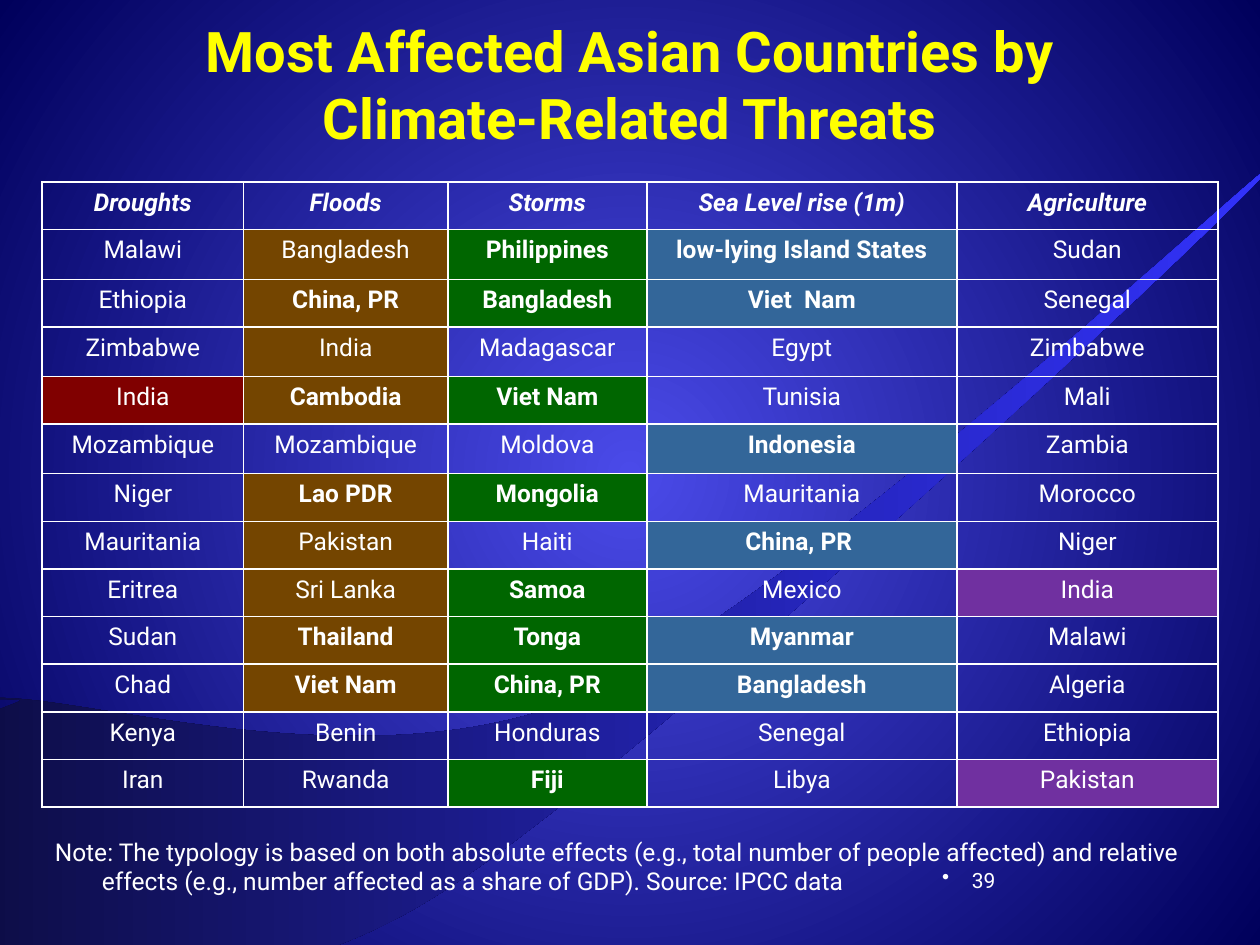
from lxml.etree import SubElement
from pptx import Presentation
from pptx.dml.color import RGBColor
from pptx.enum.text import MSO_ANCHOR, PP_ALIGN
from pptx.oxml import parse_xml
from pptx.oxml.ns import nsdecls, qn
from pptx.util import Cm, Pt

FONT = "Roboto"
HUES = {
    "white": "FFFFFF", "title": "FFFF00", "glow": "4A4AE9", "edge": "00005B",
    "ray": "3333FF", "red": "800000", "brown": "744500",
    "green": "006600", "steel": "336699", "plum": "7030A0",
}
FILLS = ["red", "brown", "green", "steel", "plum"]
WIDTHS = [4.06, 4.12, 4.01, 6.25, 5.26]
SHORT, TALL = 0.96, 1
TITLE = "Most Affected Asian Countries by Climate-Related Threats"
NOTE = ("Note: The typology is based on both absolute effects (e.g., total number "
        "of people affected) and relative effects (e.g., number affected as a "
        "share of GDP). Source: IPCC data")
HEADS = "Droughts|Floods|Storms|Sea Level rise (1m)|Agriculture"
ROWS = """Malawi|+Bangladesh|*Philippines|*low-lying Island States|Sudan
Ethiopia|*China, PR|*Bangladesh|*Viet  Nam|Senegal
Zimbabwe|+India|Madagascar|Egypt|Zimbabwe
+India|*Cambodia|*Viet Nam|Tunisia|Mali
Mozambique|Mozambique|Moldova|*Indonesia|Zambia
Niger|*Lao PDR|*Mongolia|Mauritania|Morocco
Mauritania|+Pakistan|Haiti|*China, PR |Niger
Eritrea|+Sri Lanka|*Samoa|Mexico|+India
Sudan|*Thailand|*Tonga|*Myanmar|Malawi
Chad|*Viet Nam|*China, PR|*Bangladesh|Algeria
Kenya|Benin|Honduras|Senegal|Ethiopia
Iran|Rwanda|*Fiji|Libya|+Pakistan""".split("\n")
START = (-0.08, 19.3)
CURVES = [
    [(1.4, 19.13), (4.47, 20.75), (8.76, 18.08)],
    [(13.03, 15.44), (25.12, 4.06), (25.6, 3.38)],
    [(26.11, 2.72), (15.98, 12.27), (11.71, 14.05)],
    [(7.44, 15.82), (1.85, 14.05), (-0.03, 14.07)],
    [(-1.9, 14.1), (0.43, 14.07), (0.41, 14.12)],
    [(0.41, 14.15), (0.03, 14.27), (-0.08, 14.33)],
    [(-0.08, 14.33), START, START],
]


def shade(hue):
    """Return the colour of a named hue."""
    return RGBColor.from_string(HUES[hue])


def blend(fill, first, last):
    """Give a fill a gradient from one hue to another."""
    fill.gradient()
    for stop, hue in zip(fill.gradient_stops, (first, last)):
        stop.color.rgb = shade(hue)


def paint(slide):
    """Lay the round glow on the background."""
    blend(slide.background.fill, "glow", "edge")
    line = slide.element.find(".//" + qn("a:lin"))
    line.getparent().replace(line, parse_xml(
        f'<a:path {nsdecls("a")} path="circle"><a:fillToRect l="50000" '
        't="50000" r="50000" b="50000"/></a:path>'))


def bend(shape):
    """Turn each three line segments of an outline into one curve."""
    lines = list(shape._element.iter(qn("a:lnTo")))
    for i in range(0, len(lines), 3):
        arc = parse_xml(f'<a:cubicBezTo {nsdecls("a")}/>')
        lines[i].addprevious(arc)
        for line in lines[i:i + 3]:
            arc.append(line[0])
            line.getparent().remove(line)


def add_ray(slide):
    """Draw the curved ray, darkened at its left end."""
    pen = slide.shapes.build_freeform(*(Cm(v) for v in START), scale=1.0)
    pen.add_line_segments(
        [(Cm(x), Cm(y)) for part in CURVES for x, y in part], close=True)
    ray = pen.convert_to_shape()
    bend(ray)
    ray.shadow.inherit = False
    ray.line.fill.background()
    blend(ray.fill, "ray", "ray")
    ray.fill.gradient_angle = 0
    tone = ray._element.find(".//" + qn("a:gs"))[0]
    SubElement(tone, qn("a:gamma"))
    SubElement(tone, qn("a:shade"), val="23529")
    SubElement(tone, qn("a:invGamma"))


def style(para, size, hue="white", bold=False, slant=False):
    """Set the font of each run in a paragraph."""
    for run in para.runs:
        font = run.font
        font.name, font.size = FONT, Pt(size)
        font.bold, font.italic = bold, slant
        font.color.rgb = shade(hue)


def add_text(slide, box, text, align, size, **look):
    """Add a wrapped text box and return its frame."""
    frame = slide.shapes.add_textbox(*(Cm(v) for v in box)).text_frame
    frame.word_wrap = True
    frame.text = text
    para = frame.paragraphs[0]
    para.alignment = align
    style(para, size, **look)
    return frame


def hang(para, width):
    """Give a paragraph a hanging indent and return its properties."""
    props = para._p.get_or_add_pPr()
    props.set("marL", str(Cm(width)))
    props.set("indent", str(-Cm(width)))
    return props


def rule(cell, shown="LRTB"):
    """Draw the shown cell sides in white and hide the others."""
    props = cell._tc.get_or_add_tcPr()
    for side in "LRTB":
        line = SubElement(props, qn(f"a:ln{side}"), w=str(Pt(1)))
        if side in shown:
            fill = SubElement(line, qn("a:solidFill"))
            SubElement(fill, qn("a:srgbClr"), val=HUES["white"])
        else:
            SubElement(line, qn("a:noFill"))


def fill_cell(cell, text, hue, head):
    """Write one cell, where + marks a fill and * a bold fill."""
    rule(cell)
    if text[0] in "+*":
        cell.fill.solid()
        cell.fill.fore_color.rgb = shade(hue)
    else:
        cell.fill.background()
    cell.text_frame.text = text.lstrip("+*")
    para = cell.text_frame.paragraphs[0]
    para.alignment = PP_ALIGN.CENTER
    hang(para, 0.95)
    style(para, 14, bold=head or text[0] == "*", slant=head)


def add_note(table, row):
    """Write the note across the last row."""
    cells = [table.cell(row, col) for col in range(len(WIDTHS))]
    for cell in cells:
        rule(cell, "T")
        cell.fill.background()
    cells[0].merge(cells[-1])
    cells[0].margin_top = Cm(0.63)
    cells[0].text_frame.text = NOTE
    para = cells[0].text_frame.paragraphs[0]
    hang(para, 0.95)
    style(para, 14)


def add_grid(slide):
    """Add the table of countries with its note."""
    lines = [HEADS, *ROWS]
    last = len(lines)
    highs = [TALL if i in (1, 3, 5) else SHORT for i in range(last)] + [1.95]
    table = slide.shapes.add_table(
        last + 1, len(WIDTHS), Cm(0.85), Cm(3.67),
        Cm(sum(WIDTHS)), Cm(sum(highs))).table
    table.first_row = table.horz_banding = False
    for col, wide in zip(table.columns, WIDTHS):
        col.width = Cm(wide)
    for row, high in zip(table.rows, highs):
        row.height = Cm(high)
    for i, line in enumerate(lines):
        for j, text in enumerate(line.split("|")):
            fill_cell(table.cell(i, j), text, FILLS[j], i == 0)
    add_note(table, last)


def main():
    """Build the slide and save it."""
    deck = Presentation()
    deck.slide_width, deck.slide_height = Cm(25.4), Cm(19.05)
    slide = deck.slides.add_slide(deck.slide_layouts[6])
    paint(slide)
    add_ray(slide)
    add_grid(slide)
    title = add_text(slide, (1.9, 0.83, 21.6, 2.34), TITLE,
                     PP_ALIGN.CENTER, 32, hue="title", bold=True)
    title.vertical_anchor = MSO_ANCHOR.BOTTOM
    page = add_text(slide, (17.15, 17.36, 3.17, 1.27), "39",
                    PP_ALIGN.RIGHT, 12)
    props = hang(page.paragraphs[0], 0.6)
    SubElement(props, qn("a:buChar"), char="•")
    deck.save("out.pptx")


if __name__ == "__main__":
    main()
